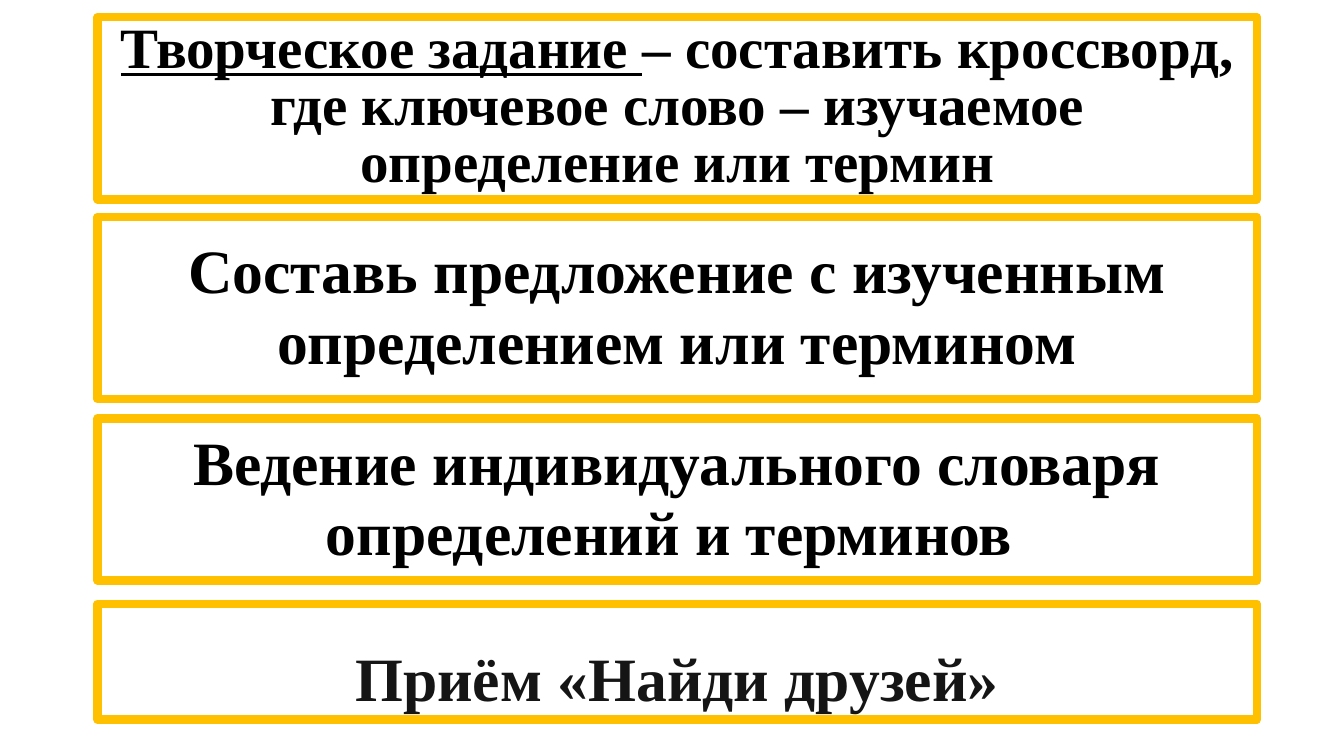
from pptx import Presentation
from pptx.dml.color import RGBColor
from pptx.enum.shapes import MSO_SHAPE
from pptx.enum.text import MSO_ANCHOR, PP_ALIGN
from pptx.util import Pt

WHITE = RGBColor(0xFF, 0xFF, 0xFF)
GOLD = RGBColor(0xFF, 0xC0, 0x00)
BLACK = RGBColor(0x00, 0x00, 0x00)
CHARCOAL = RGBColor(0x15, 0x15, 0x15)
FONT = "Times New Roman"

# Tasks: underlined lead, text, top, height, font size, line spacing, colour
TASKS = [
    ("Творческое задание ",
     "– составить кроссворд, где ключевое слово – изучаемое определение или термин",
     12.2, 130.3, 40.7, 0.83, BLACK),
    ("", "Составь предложение с изученным определением или термином",
     154.8, 130.3, 44, 0.95, BLACK),
    ("", "Ведение индивидуального словаря определений и терминов ",
     298.8, 115.9, 44, 0.95, BLACK),
    ("", "Приём «Найди друзей»",
     431.3, 82.8, 44, 1.4, CHARCOAL),
]
TASK_LEFT, TASK_WIDTH = 69.8, 828

deck = Presentation()
deck.slide_width, deck.slide_height = Pt(960), Pt(540)
slide = deck.slides.add_slide(deck.slide_layouts[6])

for lead, text, top, height, size, spacing, color in TASKS:
    # Framed box
    task = slide.shapes.add_shape(MSO_SHAPE.RECTANGLE, Pt(TASK_LEFT), Pt(top),
                                  Pt(TASK_WIDTH), Pt(height))
    task.shadow.inherit = False
    task.fill.solid()
    task.fill.fore_color.rgb = WHITE
    task.line.color.rgb = GOLD
    task.line.width = Pt(6)

    # Task wording
    frame = task.text_frame
    frame.word_wrap = True
    frame.vertical_anchor = MSO_ANCHOR.MIDDLE
    wording = frame.paragraphs[0]
    wording.alignment = PP_ALIGN.CENTER
    wording.line_spacing = spacing
    for part in filter(None, (lead, text)):
        run = wording.add_run()
        run.text = part
        run.font.name = FONT
        run.font.size = Pt(size)
        run.font.bold = True
        run.font.underline = part == lead
        run.font.color.rgb = color

deck.save("out.pptx")
